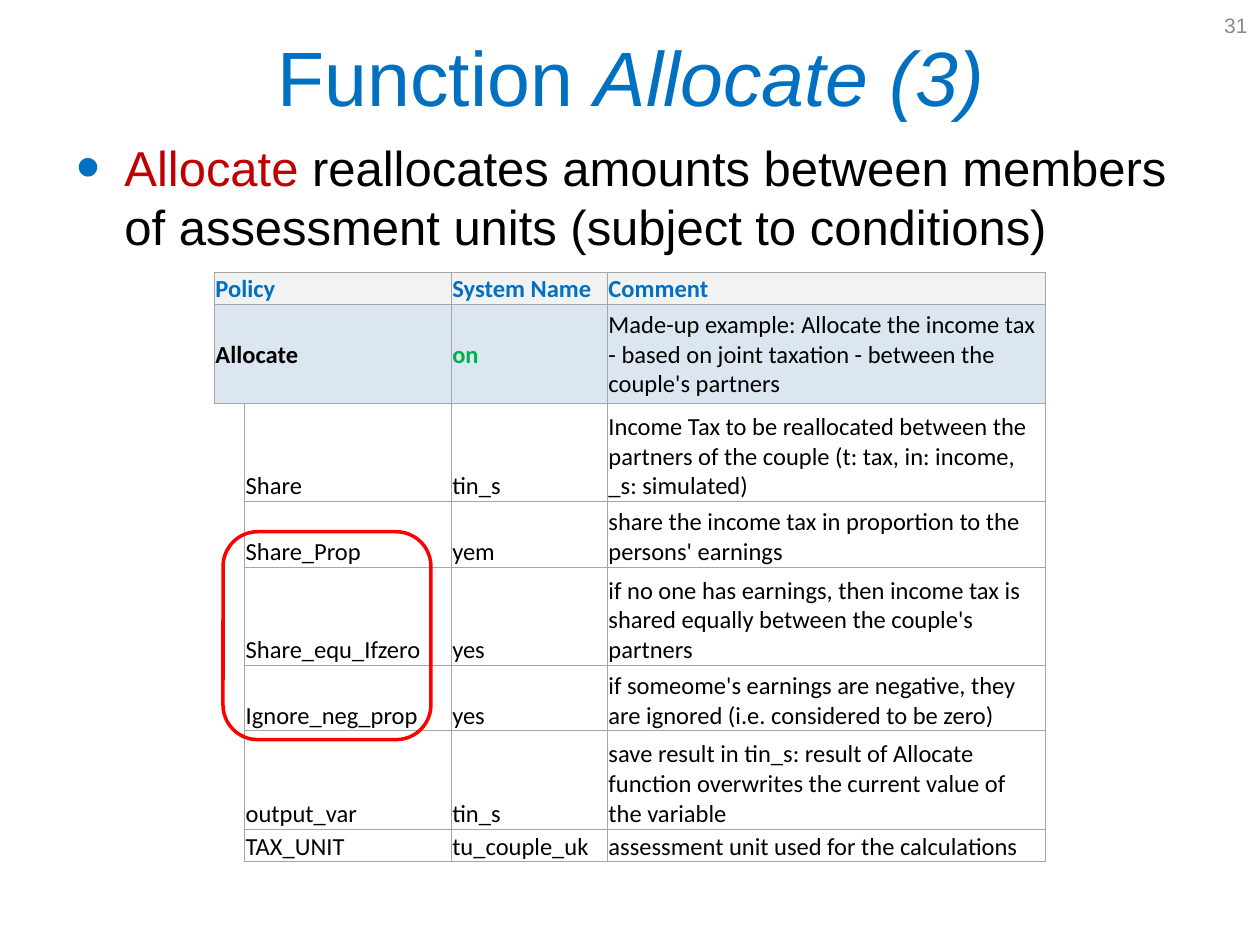
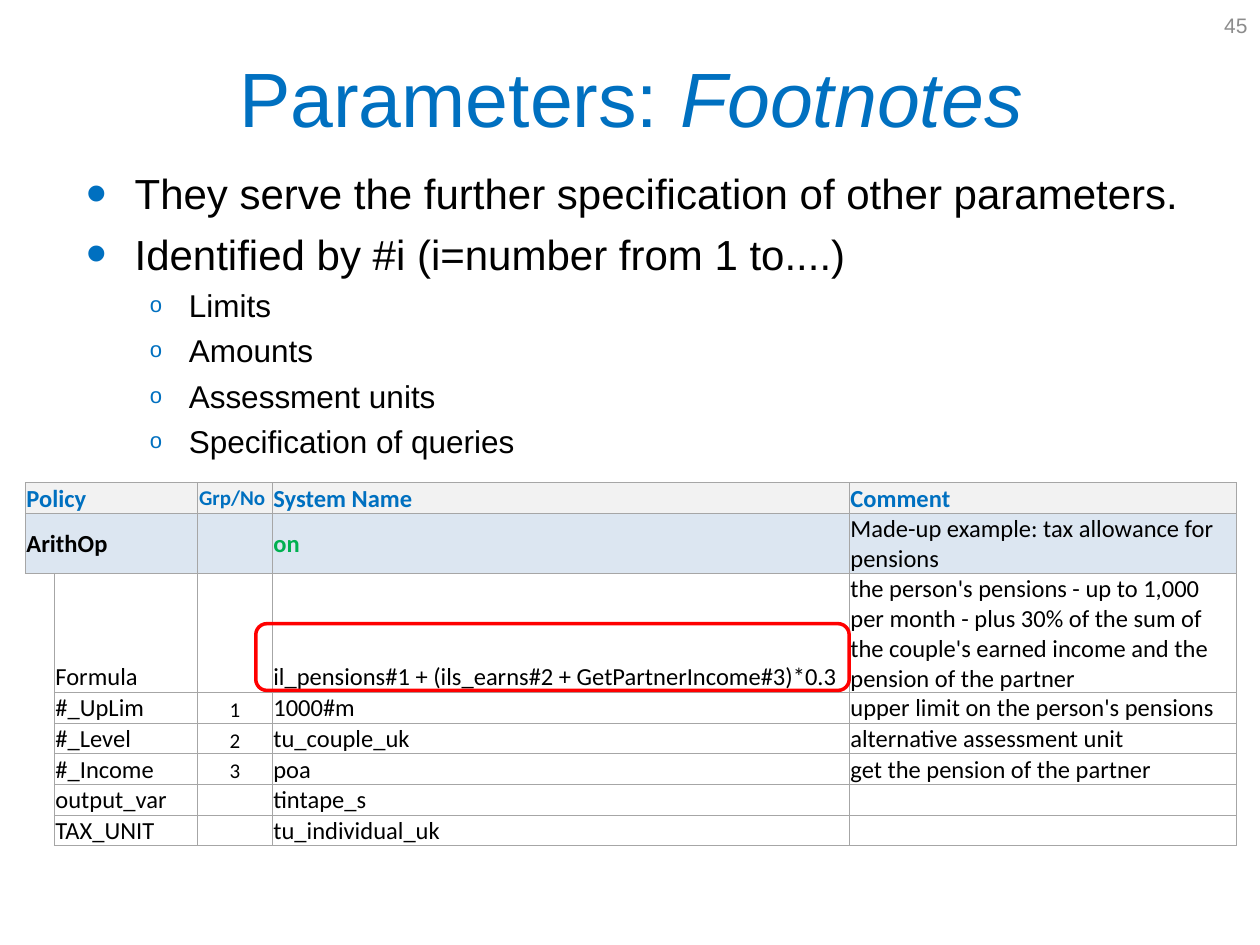
from dataclasses import dataclass

from lxml import etree
from pptx import Presentation
from pptx.dml.color import RGBColor
from pptx.enum.shapes import MSO_SHAPE
from pptx.enum.text import MSO_ANCHOR, PP_ALIGN
from pptx.oxml.ns import qn
from pptx.util import Inches, Pt

ROUNDED = MSO_SHAPE.ROUNDED_RECTANGLE
MIDDLE, BOTTOM, TOP = MSO_ANCHOR.MIDDLE, MSO_ANCHOR.BOTTOM, MSO_ANCHOR.TOP
LEFT, CENTER, RIGHT = PP_ALIGN.LEFT, PP_ALIGN.CENTER, PP_ALIGN.RIGHT
COLORS = {
    "blue": "0070C0", "crimson": "C00000", "black": "000000", "gray": "8C8C8C",
    "green": "00B050", "red": "FF0000", "white": "FFFFFF", "header": "F2F2F2",
    "function": "DCE6F1", "border": "A6A6A6",
}
BODY_FONT, TABLE_FONT = "Arial", "Calibri"
GROUP_COLUMN = "Grp/No"


@dataclass(frozen=True)
class Area:
    left: float
    top: float
    width: float
    height: float

    def lengths(self) -> tuple:
        return tuple(Inches(v) for v in (self.left, self.top, self.width, self.height))


@dataclass(frozen=True)
class Span:
    text: str
    size: float
    color: str = "black"
    font: str = BODY_FONT
    bold: bool = False
    italic: bool = False


@dataclass(frozen=True)
class BulletStyle:
    symbol: str
    level: int
    indent: float
    hanging: float
    percent: int


@dataclass(frozen=True)
class Bullet:
    style: BulletStyle
    spans: tuple[Span, ...]


@dataclass(frozen=True)
class PolicyTable:
    area: Area
    columns: tuple[float, ...]
    heights: tuple[float, ...]
    rows: tuple[tuple[str, ...], ...]


@dataclass(frozen=True)
class Lesson:
    number: int
    title: str
    emphasis: str
    title_area: Area
    body_area: Area
    bullets: tuple[Bullet, ...]
    table: PolicyTable
    highlight: Area


DOT = BulletStyle("•", 0, 0.38, 0.38, 140)
RING = BulletStyle("o", 1, 0.81, 0.31, 70)
NUMBER_AREA = Area(7.67, 0, 2.33, 0.4)

LESSONS = (
    Lesson(
        31, "Function ", "Allocate (3)",
        Area(0.51, 0.13, 9, 0.94), Area(0.51, 0.99, 9, 4.95),
        (Bullet(DOT, (
            Span("Allocate", 28, "crimson"),
            Span(" reallocates amounts between members of assessment units "
                 "(subject to conditions)", 28),
        )),),
        PolicyTable(
            Area(1.7, 2.16, 6.6, 4.69),
            (0.24, 1.64, 1.24, 3.48),
            (0.26, 0.78, 0.78, 0.52, 0.78, 0.52, 0.78, 0.26),
            (
                ("Policy", "System Name", "Comment"),
                ("Allocate", "on", "Made-up example: Allocate the income tax - based on "
                 "joint taxation - between the couple's partners"),
                ("Share", "tin_s", "Income Tax to be reallocated between the partners of "
                 "the couple (t: tax, in: income, _s: simulated)"),
                ("Share_Prop", "yem",
                 "share the income tax in proportion to the persons' earnings"),
                ("Share_equ_Ifzero", "yes", "if no one has earnings, then income tax is "
                 "shared equally between the couple's partners"),
                ("Ignore_neg_prop", "yes", "if someome's earnings are negative, they are "
                 "ignored (i.e. considered to be zero)"),
                ("output_var", "tin_s", "save result in tin_s: result of Allocate function "
                 "overwrites the current value of the variable"),
                ("TAX_UNIT", "tu_couple_uk", "assessment unit used for the calculations"),
            ),
        ),
        Area(1.77, 4.22, 1.65, 1.65),
    ),
    Lesson(
        45, "Parameters: ", "Footnotes",
        Area(0.51, 0.14, 9, 1.25), Area(0.59, 1.23, 8.91, 2.44),
        tuple(Bullet(DOT, (Span(text, 24),)) for text in (
            "They serve the further specification of other parameters.",
            "Identified by #i (i=number from 1 to....)",
        )) + tuple(Bullet(RING, (Span(text, 18),)) for text in (
            "Limits", "Amounts", "Assessment units", "Specification of queries",
        )),
        PolicyTable(
            Area(0.2, 3.83, 9.61, 2.86),
            (0.23, 1.14, 0.59, 4.58, 3.07),
            (0.23, 0.47, 0.93) + (0.23,) * 5,
            (
                ("Policy", GROUP_COLUMN, "System Name", "Comment"),
                ("ArithOp", "", "on", "Made-up example: tax allowance for pensions"),
                ("Formula", "", "il_pensions#1 + (ils_earns#2 + GetPartnerIncome#3)*0.3",
                 "the person's pensions - up to 1,000 per month - plus 30% of the sum of "
                 "the couple's earned income and the pension of the partner"),
                ("#_UpLim", "1", "1000#m", "upper limit on the person's pensions"),
                ("#_Level", "2", "tu_couple_uk", "alternative assessment unit"),
                ("#_Income", "3", "poa", "get the pension of the partner"),
                ("output_var", "", "tintape_s", ""),
                ("TAX_UNIT", "", "tu_individual_uk", ""),
            ),
        ),
        Area(2.03, 4.95, 4.71, 0.53),
    ),
)


def rgb(name: str) -> RGBColor:
    return RGBColor.from_string(COLORS[name])


def add_span(para, span: Span) -> None:
    run = para.add_run()
    run.text = span.text
    font = run.font
    font.name, font.size = span.font, Pt(span.size)
    font.bold, font.italic = span.bold, span.italic
    font.color.rgb = rgb(span.color)


def add_box(page, area: Area, anchor):
    frame = page.shapes.add_textbox(*area.lengths()).text_frame
    frame.word_wrap = True
    frame.vertical_anchor = anchor
    return frame


def add_line(page, area: Area, align, spans: tuple[Span, ...]) -> None:
    para = add_box(page, area, MIDDLE).paragraphs[0]
    para.alignment = align
    for span in spans:
        add_span(para, span)


def set_bullet(para, style: BulletStyle) -> None:
    para.level = style.level
    properties = para._p.get_or_add_pPr()
    properties.set("marL", str(Inches(style.indent)))
    properties.set("indent", str(-Inches(style.hanging)))
    color = etree.SubElement(properties, qn("a:buClr"))
    etree.SubElement(color, qn("a:srgbClr"), val=COLORS["blue"])
    etree.SubElement(properties, qn("a:buSzPct"), val=str(style.percent * 1000))
    etree.SubElement(properties, qn("a:buFont"), typeface=BODY_FONT)
    etree.SubElement(properties, qn("a:buChar"), char=style.symbol)


def add_bullets(page, area: Area, bullets: tuple[Bullet, ...]) -> None:
    frame = add_box(page, area, TOP)
    frame.margin_top = Inches(0.1)
    for index, bullet in enumerate(bullets):
        para = frame.add_paragraph() if index else frame.paragraphs[0]
        set_bullet(para, bullet.style)
        if index:
            para.space_before = Pt(bullet.spans[0].size * 0.24)
        for span in bullet.spans:
            add_span(para, span)


def set_borders(cell, sides: str) -> None:
    properties = cell._tc.get_or_add_tcPr()
    for index, side in enumerate("LRTB"):
        line = etree.Element(qn(f"a:ln{side}"), w=str(Pt(0.5)))
        if side in sides:
            fill = etree.SubElement(line, qn("a:solidFill"))
            etree.SubElement(fill, qn("a:srgbClr"), val=COLORS["border"])
        else:
            etree.SubElement(line, qn("a:noFill"))
        properties.insert(index, line)


def format_cell(cell, fill: str, anchor, sides: str) -> None:
    cell.fill.solid()
    cell.fill.fore_color.rgb = rgb(fill)
    cell.vertical_anchor = anchor
    cell.margin_left = cell.margin_right = cell.margin_top = Inches(0.01)
    cell.margin_bottom = 0
    set_borders(cell, sides)


def cell_span(text: str, row: int, grouped: bool, comment: bool) -> Span:
    color = "blue" if row == 0 else "green" if text == "on" else "black"
    bold = row == 0 or (row == 1 and not comment)
    return Span(text, 12 if grouped else 14, color, TABLE_FONT, bold)


def add_policy_table(page, policy: PolicyTable) -> None:
    table = page.shapes.add_table(
        len(policy.rows), len(policy.columns), *policy.area.lengths()).table
    table.first_row = table.horz_banding = False
    for column, width in zip(table.columns, policy.columns):
        column.width = Inches(width)
    for row, height in zip(table.rows, policy.heights):
        row.height = Inches(height)
    headings = policy.rows[0]
    for row, texts in enumerate(policy.rows):
        heading = row < 2
        fill = ("header", "function")[row] if heading else "white"
        anchor = MIDDLE if heading else BOTTOM
        padded = (texts[0], "", *texts[1:]) if heading else ("", *texts)
        for column, text in enumerate(padded):
            cell = table.cell(row, column)
            stub = column == 0 and not heading
            sides = ("RT" if row == 2 else "R") if stub else "LRTB"
            format_cell(cell, fill, anchor, sides)
            para = cell.text_frame.paragraphs[0]
            grouped = headings[max(column - 1, 0)] == GROUP_COLUMN
            para.alignment = CENTER if grouped and not heading else LEFT
            if text:
                comment = column == len(padded) - 1
                add_span(para, cell_span(text, row, grouped, comment))
            else:
                etree.SubElement(para._p, qn("a:endParaRPr"), sz="1200")
        if heading:
            table.cell(row, 0).merge(table.cell(row, 1))


def add_highlight(page, area: Area) -> None:
    shape = page.shapes.add_shape(ROUNDED, *area.lengths())
    shape.shadow.inherit = False
    shape.fill.background()
    shape.line.color.rgb = rgb("red")
    shape.line.width = Pt(2)


def add_lesson(deck, lesson: Lesson) -> None:
    page = deck.slides.add_slide(deck.slide_layouts[6])
    add_bullets(page, lesson.body_area, lesson.bullets)
    add_policy_table(page, lesson.table)
    add_line(page, lesson.title_area, CENTER, (
        Span(lesson.title, 44, "blue"),
        Span(lesson.emphasis, 44, "blue", italic=True),
    ))
    add_line(page, NUMBER_AREA, RIGHT, (Span(str(lesson.number), 12, "gray"),))
    add_highlight(page, lesson.highlight)


def main() -> None:
    deck = Presentation()
    deck.slide_width, deck.slide_height = Inches(10), Inches(7.5)
    for lesson in LESSONS:
        add_lesson(deck, lesson)
    deck.save("out.pptx")


if __name__ == "__main__":
    main()
